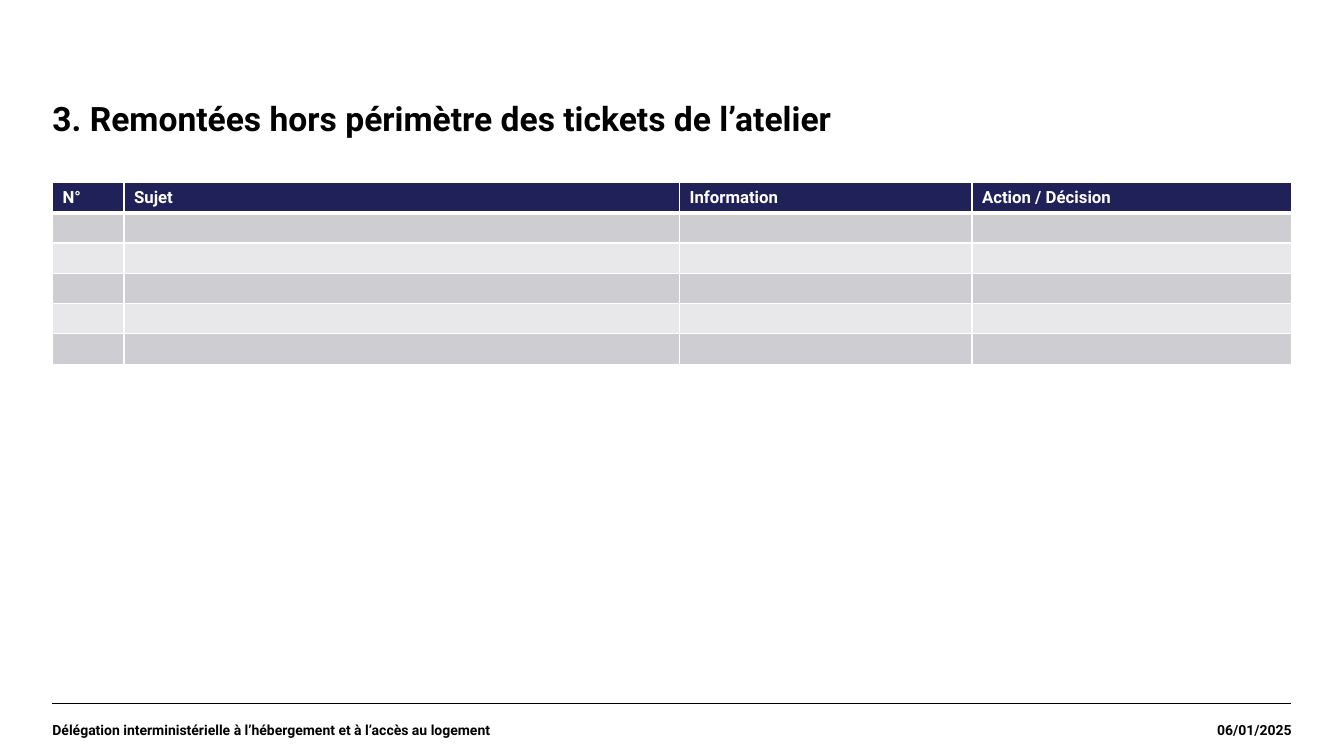
from lxml.etree import SubElement
from pptx import Presentation
from pptx.dml.color import RGBColor
from pptx.enum.shapes import MSO_CONNECTOR as CONNECTOR
from pptx.enum.text import MSO_ANCHOR as ANCHOR, PP_ALIGN as ALIGN
from pptx.oxml.ns import qn
from pptx.util import Inches, Pt

LEFT, WIDTH = 0.52, 12.28
HEADERS = ["N°", "Sujet", "Information", "Action / Décision"]
COLUMN_WIDTHS = [0.71, 5.51, 2.9, 3.17]
EMPTY_ROWS = 5


def rgb(color):
    return RGBColor.from_string(color)


class SlideBuilder:
    font = "Roboto"
    black, white, navy = "000000", "FFFFFF", "21215A"
    bands = ["CDCDD2", "E8E8EA"]

    def __init__(self, slide):
        self.slide = slide

    def set_text(self, frame, text, size, color, align=ALIGN.LEFT):
        frame.text = text
        paragraph = frame.paragraphs[0]
        paragraph.alignment = align
        for run in paragraph.runs:
            run.font.name = self.font
            run.font.size = Pt(size)
            run.font.bold = True
            run.font.color.rgb = rgb(color)
        return paragraph

    def reset_frame(self, frame, anchor):
        """Remove the margins and fix wrapping and anchoring."""
        frame.margin_left = frame.margin_right = 0
        frame.margin_top = frame.margin_bottom = 0
        frame.word_wrap = True
        frame.vertical_anchor = anchor

    def title(self, text, top, height):
        title = self.slide.shapes.title
        title.left, title.top = Inches(LEFT), Inches(top)
        title.width, title.height = Inches(WIDTH), Inches(height)
        self.reset_frame(title.text_frame, ANCHOR.TOP)
        self.set_text(title.text_frame, text, 24, self.black).line_spacing = 0.9

    def footer(self, text, left, width, align):
        box = self.slide.shapes.add_textbox(
            Inches(left), Inches(6.98), Inches(width), Inches(0.52))
        self.reset_frame(box.text_frame, ANCHOR.MIDDLE)
        self.set_text(box.text_frame, text, 10, self.black, align)

    def rule(self, y):
        rule = self.slide.shapes.add_connector(
            CONNECTOR.STRAIGHT, Inches(LEFT), Inches(y),
            Inches(LEFT + WIDTH), Inches(y))
        rule.line.color.rgb = rgb(self.black)
        rule.line.width = Pt(0.8)
        SubElement(rule._element.spPr, qn("a:effectLst"))

    def borders(self, cell, top, bottom):
        properties = cell._tc.get_or_add_tcPr()
        for side, width in zip("LRTB", (1, 1, top, bottom)):
            line = SubElement(properties, qn(f"a:ln{side}"), w=str(Pt(width)))
            fill = SubElement(line, qn("a:solidFill"))
            SubElement(fill, qn("a:srgbClr"), val=self.white)

    def table(self, top, height):
        row_count = EMPTY_ROWS + 1
        table = self.slide.shapes.add_table(
            row_count, len(HEADERS), Inches(LEFT), Inches(top),
            Inches(WIDTH), Inches(height)).table
        for column, width in zip(table.columns, COLUMN_WIDTHS):
            column.width = Inches(width)
        for index, row in enumerate(table.rows):
            row.height = Inches(height / row_count)
            for cell, header in zip(row.cells, HEADERS):
                self.borders(cell, top=3 if index == 1 else 1,
                             bottom=3 if index == 0 else 1)
                cell.fill.solid()
                if index == 0:
                    cell.fill.fore_color.rgb = rgb(self.navy)
                    self.set_text(cell.text_frame, header, 12, self.white)
                else:
                    cell.fill.fore_color.rgb = rgb(self.bands[(index - 1) % 2])
                    SubElement(cell.text_frame.paragraphs[0]._p,
                               qn("a:endParaRPr"), sz="1200")


def main():
    presentation = Presentation()
    presentation.slide_width = Inches(13.33)
    presentation.slide_height = Inches(7.5)
    title_only = presentation.slide_layouts[5]
    builder = SlideBuilder(presentation.slides.add_slide(title_only))
    builder.rule(6.98)
    builder.title("3. Remontées hors périmètre des tickets de l’atelier", 1.02, 1.05)
    builder.footer("06/01/2025", 11.1, 1.71, ALIGN.RIGHT)
    builder.footer("Délégation interministérielle à l’hébergement et à l’accès au logement",
                   LEFT, 8.61, ALIGN.LEFT)
    builder.table(1.81, 1.77)
    presentation.save("out.pptx")


if __name__ == "__main__":
    main()
